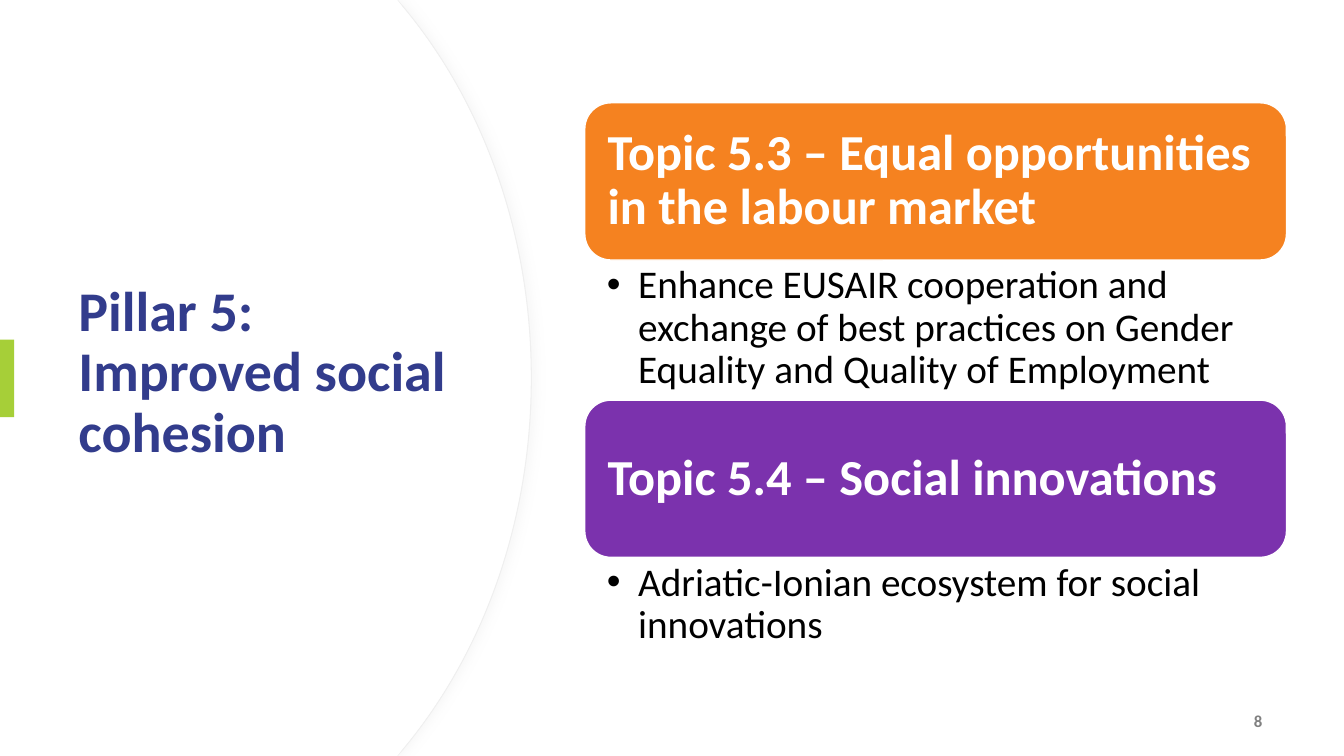
from lxml.etree import Element, SubElement
from pptx import Presentation
from pptx.dml.color import RGBColor
from pptx.enum.shapes import MSO_SHAPE
from pptx.enum.text import MSO_ANCHOR, PP_ALIGN
from pptx.oxml.ns import qn
from pptx.util import Inches, Pt

TITLE = "Pillar 5: Improved social cohesion"
PAGE_NUMBER = "8"
COLORS = {
    "white": "FFFFFF", "black": "000000", "navy": "323C8C", "green": "A6CF38",
    "orange": "F58220", "purple": "7B32AD", "grey": "808080",
    "edge": "EFEFEF", "shadow": "D9D9D9",
}
TOPICS = [  # heading, colour, bullet, height of the bullet area
    ("Topic 5.3 – Equal opportunities in the labour market", "orange",
     "Enhance EUSAIR cooperation and exchange of best practices on "
     "Gender Equality and Quality of Employment", 1.39),
    ("Topic 5.4 – Social innovations", "purple",
     "Adriatic-Ionian ecosystem for social innovations", 0.96),
]

FONT = "Calibri"
WIDTH, HEIGHT = 13.33, 7.5
TOPIC_LEFT, TOPIC_TOP, TOPIC_WIDTH, HEADER_HEIGHT = 5.8, 1.02, 6.96, 1.56
HEADER_MARGINS = (0.15, 0.15, 0.15, 0.15)
BULLET_MARGINS = (0.22, 0.05, 0.28, 0.05)
BULLET_INDENT = 0.31
PANEL_INSETS = (0, 0.01)
UPPER_ARC = [(4.01, 0.08), (4.79, 1.02), (5.27, 2.32), (5.27, 3.75)]
PANEL_SHOULDER = 3.94

presentation = Presentation()
presentation.slide_width, presentation.slide_height = Inches(WIDTH), Inches(HEIGHT)
slide = presentation.slides.add_slide(presentation.slide_layouts[6])


def color(name):
    return RGBColor.from_string(COLORS[name])


def paint(shape, fill, line=None, line_width=1):
    shape.shadow.inherit = False
    shape.fill.solid()
    shape.fill.fore_color.rgb = color(fill)
    if line:
        shape.line.color.rgb = color(line)
        shape.line.width = Pt(line_width)
    else:
        shape.line.fill.background()


def write(shape, text, size, text_color, bold=True, anchor=MSO_ANCHOR.MIDDLE,
          margins=(0.1, 0.05, 0.1, 0.05), align=PP_ALIGN.LEFT, spacing=0.9,
          bullet=False):
    frame = shape.text_frame
    frame.text = text
    frame.word_wrap = True
    frame.vertical_anchor = anchor
    (frame.margin_left, frame.margin_top,
     frame.margin_right, frame.margin_bottom) = map(Inches, margins)
    paragraph = frame.paragraphs[0]
    paragraph.alignment = align
    paragraph.line_spacing = spacing
    if bullet:
        properties = paragraph._p.get_or_add_pPr()
        properties.set("marL", str(Inches(BULLET_INDENT)))
        properties.set("indent", str(-Inches(BULLET_INDENT)))
        SubElement(properties, qn("a:buFont"), typeface="Arial")
        SubElement(properties, qn("a:buChar"), char="•")
    font = paragraph.runs[0].font
    font.name, font.size, font.bold = FONT, Pt(size), bold
    font.color.rgb = color(text_color)


def add_text(left, top, width, height, *args, **options):
    box = slide.shapes.add_textbox(*map(Inches, (left, top, width, height)))
    write(box, *args, **options)


def bend(segment, controls):
    """Turn a straight freeform segment into a Bezier curve."""
    segment.tag = qn("a:cubicBezTo")
    for index, (x, y) in enumerate(controls):
        point = Element(qn("a:pt"), x=str(Inches(x)), y=str(Inches(y)))
        segment.insert(index, point)


def add_panel(inset):
    """Add the white panel whose right edge is an arc, mirrored top to bottom."""
    start, *upper_controls, middle = [(x - inset, y) for x, y in UPPER_ARC]
    lower_controls = [(x, HEIGHT - y) for x, y in reversed(upper_controls)]
    corners = [(PANEL_SHOULDER, 0), start, middle, (start[0], HEIGHT - start[1]),
               (PANEL_SHOULDER, HEIGHT), (0, HEIGHT)]
    builder = slide.shapes.build_freeform(0, 0)
    builder.add_line_segments([(Inches(x), Inches(y)) for x, y in corners], close=True)
    panel = builder.convert_to_shape()
    segments = list(panel._element.iter(qn("a:lnTo")))
    for segment, controls in zip(segments[2:4], (upper_controls, lower_controls)):
        bend(segment, controls)
    return panel


def add_soft_shadow(shape, name, opacity, blur, distance):
    effects = shape._element.spPr.find(qn("a:effectLst"))
    shadow = SubElement(effects, qn("a:outerShdw"), blurRad=str(Pt(blur)),
                        dist=str(Pt(distance)), dir="0", algn="l", rotWithShape="0")
    tint = SubElement(shadow, qn("a:srgbClr"), val=COLORS[name])
    SubElement(tint, qn("a:alpha"), val=str(opacity * 1000))


for inset in PANEL_INSETS:
    panel = add_panel(inset)
    if inset:
        paint(panel, "white")
    else:
        paint(panel, "white", "edge", 0.75)
        add_soft_shadow(panel, "shadow", opacity=20, blur=7, distance=3)

add_text(0.68, 1.23, 3.94, 4.95, TITLE, 40, "navy")
accent = slide.shapes.add_shape(
    MSO_SHAPE.RECTANGLE, *map(Inches, (0, 3.37, 0.14, 0.77)))
paint(accent, "green")
add_text(9.62, 6.95, 3, 0.4, PAGE_NUMBER, 12, "grey",
         align=PP_ALIGN.RIGHT, spacing=1.0)

top = TOPIC_TOP
for heading, fill, bullet_text, bullet_height in TOPICS:
    header = slide.shapes.add_shape(
        MSO_SHAPE.ROUNDED_RECTANGLE,
        *map(Inches, (TOPIC_LEFT, top, TOPIC_WIDTH, HEADER_HEIGHT)))
    paint(header, fill, "white")
    write(header, heading, 36, "white", margins=HEADER_MARGINS)
    top += HEADER_HEIGHT
    add_text(TOPIC_LEFT, top, TOPIC_WIDTH, bullet_height, bullet_text, 28, "black",
             bold=False, anchor=MSO_ANCHOR.TOP, margins=BULLET_MARGINS, bullet=True)
    top += bullet_height

presentation.save("out.pptx")
